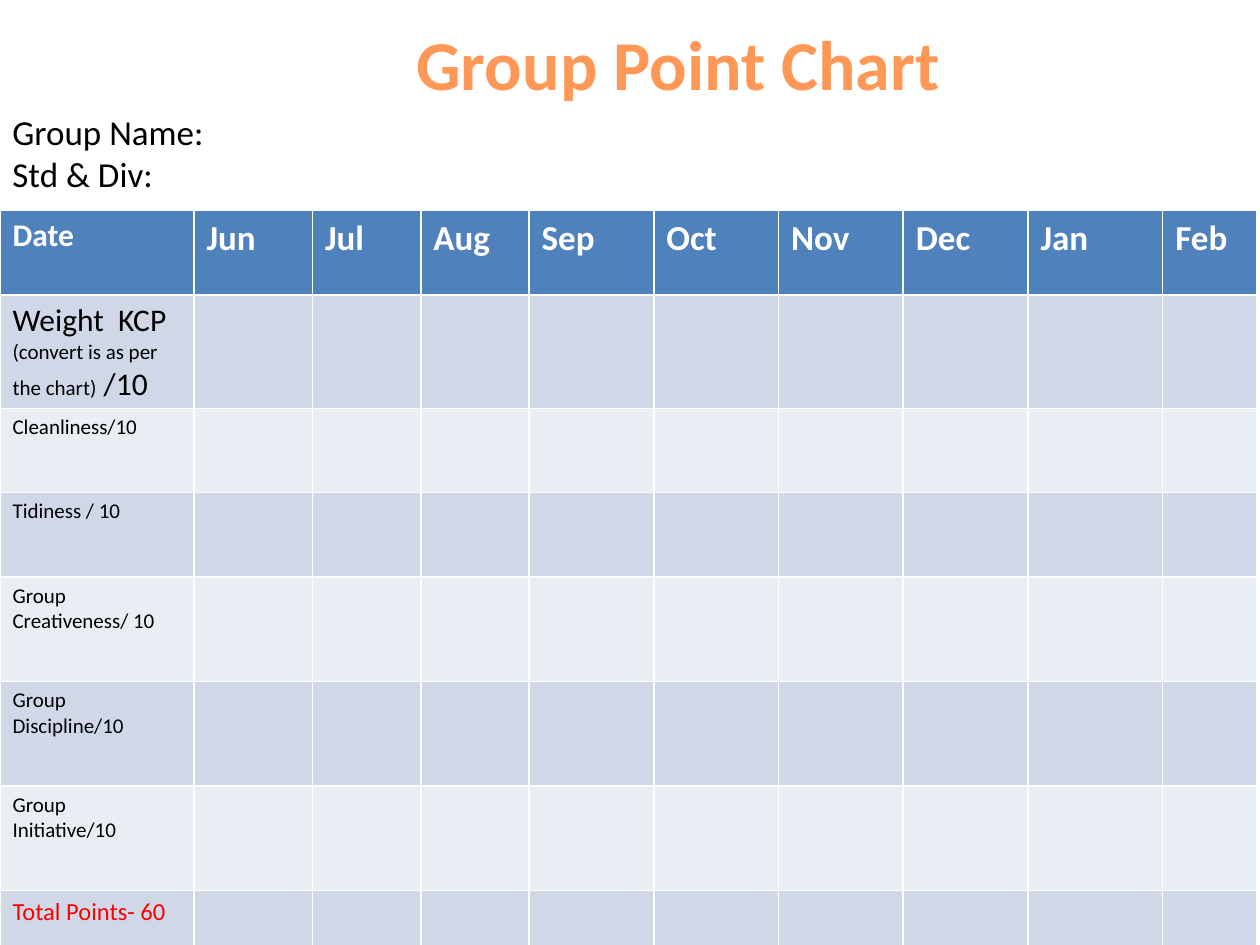
from pptx import Presentation
from pptx.dml.color import RGBColor
from pptx.enum.text import MSO_ANCHOR, PP_ALIGN
from pptx.util import Inches, Pt

FONT = "Calibri"
BLACK, WHITE, RED, ORANGE = "000000", "FFFFFF", "FF0000", "FF9856"
HEADER_FILL, BAND_FILLS = "4F81BD", ("D0D8E8", "E9EDF4")

TITLE = "Group Point Chart"
DETAILS = ["Group Name:", "Std & Div:"]
MONTHS = ["Jun", "Jul", "Aug", "Sep", "Oct", "Nov", "Dec", "Jan", "Feb"]

# Each criterion: row height, text colour, paragraphs of (text, size) runs
CRITERIA = [
    (0.67, BLACK, [[("Weight  KCP", 18)],
                   [("(convert is as per the chart)", 12), (" /10", 18)]]),
    (0.67, BLACK, [[("Cleanliness/10", 12)]]),
    (0.67, BLACK, [[("Tidiness / 10", 12)]]),
    (0.83, BLACK, [[("Group", 12)], [("Creativeness/ 10", 12)]]),
    (0.83, BLACK, [[("Group", 12)], [("Discipline/10", 12)]]),
    (0.83, BLACK, [[("Group", 12)], [("Initiative/10", 12)]]),
    (0.67, RED, [[("Total Points- 60", 14)]]),
]
HEADER_HEIGHT = 0.67
COL_WIDTHS = [1.54, 0.94, 0.86, 0.86, 0.99, 0.99, 0.99, 0.99, 1.07, 0.75]


def rgb(color):
    return RGBColor.from_string(color)


def write(tf, paragraphs, color, bold=False, align=PP_ALIGN.LEFT):
    for i, runs in enumerate(paragraphs):
        p = tf.add_paragraph() if i else tf.paragraphs[0]
        p.alignment = align
        for text, size in runs:
            r = p.add_run()
            r.text = text
            r.font.name, r.font.size, r.font.bold = FONT, Pt(size), bold
            r.font.color.rgb = rgb(color)


def add_text(slide, box, paragraphs, color, **style):
    tf = slide.shapes.add_textbox(*map(Inches, box)).text_frame
    tf.word_wrap = True
    tf.vertical_anchor = MSO_ANCHOR.MIDDLE
    write(tf, paragraphs, color, **style)


def add_points_table(slide):
    heights = [HEADER_HEIGHT] + [height for height, _, _ in CRITERIA]
    table = slide.shapes.add_table(
        len(heights), len(COL_WIDTHS), Inches(0), Inches(1.67),
        Inches(sum(COL_WIDTHS)), Inches(sum(heights))).table
    for col, width in zip(table.columns, COL_WIDTHS):
        col.width = Inches(width)
    for i, (row, height) in enumerate(zip(table.rows, heights)):
        row.height = Inches(height)
        for cell in row.cells:
            cell.fill.solid()
            cell.fill.fore_color.rgb = rgb(BAND_FILLS[(i - 1) % 2] if i else HEADER_FILL)

    headings = [("Date", 18)] + [(month, 20) for month in MONTHS]
    for j, heading in enumerate(headings):
        write(table.cell(0, j).text_frame, [[heading]], WHITE, bold=True)
    for i, (_, color, paragraphs) in enumerate(CRITERIA, start=1):
        write(table.cell(i, 0).text_frame, paragraphs, color)


def main():
    prs = Presentation()
    prs.slide_width, prs.slide_height = Inches(10), Inches(7.5)
    slide = prs.slides.add_slide(prs.slide_layouts[6])
    add_text(slide, (2.92, 0, 4.92, 1), [[(TITLE, 40)]], ORANGE,
             bold=True, align=PP_ALIGN.CENTER)
    add_points_table(slide)
    add_text(slide, (0, 0.75, 10, 0.92), [[(line, 20)] for line in DETAILS], BLACK)
    prs.save("out.pptx")


if __name__ == "__main__":
    main()
